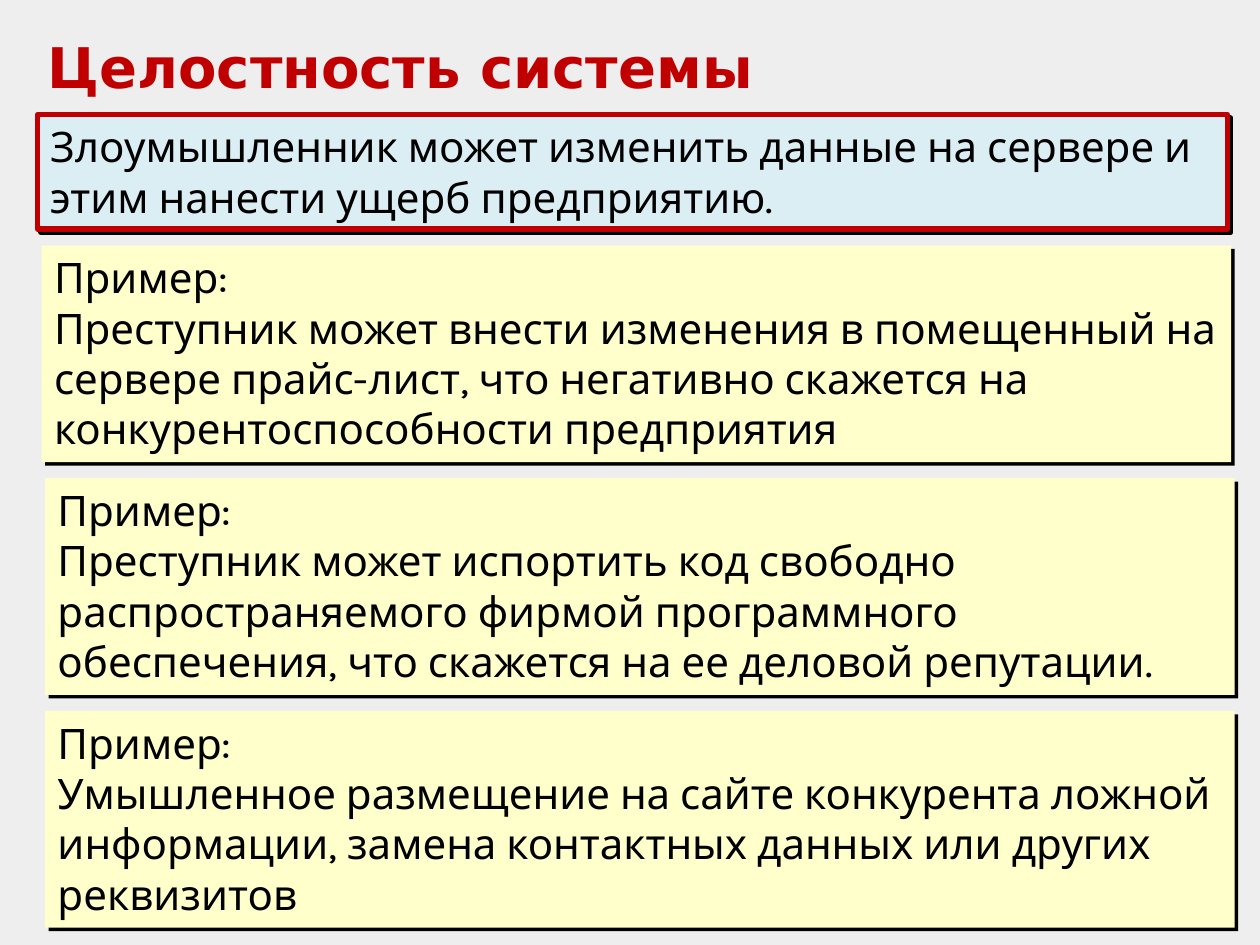
from lxml.etree import SubElement
from pptx import Presentation
from pptx.dml.color import RGBColor as RGB
from pptx.enum.shapes import MSO_SHAPE as SHAPE
from pptx.enum.text import MSO_ANCHOR as ANCHOR, MSO_AUTO_SIZE as AUTO, PP_ALIGN as ALIGN
from pptx.oxml.ns import qn
from pptx.util import Cm, Pt

COLORS = {"back": "EEEEEE", "accent": "C00000", "thesis": "DBEEF4",
          "example": "FFFFCC", "text": "000000", "shadow": "000000"}
TITLE = "Целостность системы"
THESIS = "Злоумышленник может изменить данные на сервере и этим нанести ущерб предприятию."
EXAMPLE_LABEL = "Пример:"
EXAMPLES = [  # left edge in cm, text
    (0.84, "Преступник может внести изменения в помещенный на сервере прайс-лист, "
           "что негативно скажется на конкурентоспособности предприятия"),
    (0.91, "Преступник может испортить код свободно распространяемого фирмой "
           "программного обеспечения, что скажется на ее деловой репутации."),
    (0.91, "Умышленное размещение на сайте конкурента ложной информации, "
           "замена контактных данных или других реквизитов"),
]
TITLE_FONT = {"name": "DejaVu Sans", "size": Pt(32), "bold": True}
BODY_FONT = {"name": "Karla", "size": Pt(24)}
BOX_W, THESIS_H, EXAMPLE_H = 23.98, 2.31, 4.37
EXAMPLE_TOP, EXAMPLE_STEP = 4.95, 4.69


def color(name):
    return RGB.from_string(COLORS[name])


def write(s, lines, font, ink, anchor):
    tf = s.text_frame
    tf.word_wrap = True
    tf.auto_size = AUTO.SHAPE_TO_FIT_TEXT
    tf.vertical_anchor = anchor
    for i, line in enumerate(lines):
        p = tf.paragraphs[0] if i == 0 else tf.add_paragraph()
        p.alignment = ALIGN.LEFT
        r = p.add_run()
        r.text = line
        for key, value in font.items():
            setattr(r.font, key, value)
        r.font.color.rgb = color(ink)


def add_hard_shadow(s):
    """Give the shape an unblurred shadow down and to the right."""
    s.shadow.inherit = False
    effects = s._element.spPr.find(qn("a:effectLst"))
    outer = SubElement(effects, qn("a:outerShdw"), dist=str(Pt(2.8)),
                       dir=str(45 * 60000), algn="ctr", rotWithShape="0")
    SubElement(outer, qn("a:srgbClr"), val=COLORS["shadow"])


def add_box(slide, left, top, height, fill, lines, border=None):
    s = slide.shapes.add_shape(SHAPE.RECTANGLE, Cm(left), Cm(top), Cm(BOX_W), Cm(height))
    s.fill.solid()
    s.fill.fore_color.rgb = color(fill)
    if border:
        s.line.color.rgb = color(border)
        s.line.width = Pt(3)
    else:
        s.line.fill.background()
    add_hard_shadow(s)
    write(s, lines, BODY_FONT, "text", ANCHOR.TOP)


def main():
    prs = Presentation()
    prs.slide_width, prs.slide_height = Cm(25.4), Cm(19.05)
    slide = prs.slides.add_slide(prs.slide_layouts[6])
    slide.background.fill.solid()
    slide.background.fill.fore_color.rgb = color("back")

    title = slide.shapes.add_textbox(Cm(0.71), Cm(0.53), Cm(23.8), Cm(1.63))
    write(title, [TITLE], TITLE_FONT, "accent", ANCHOR.TOP)

    add_box(slide, 0.76, 2.31, THESIS_H, "thesis", [THESIS], "accent")
    for i, (left, text) in enumerate(EXAMPLES):
        add_box(slide, left, EXAMPLE_TOP + i * EXAMPLE_STEP, EXAMPLE_H,
                "example", [EXAMPLE_LABEL, text])
    prs.save("out.pptx")


if __name__ == "__main__":
    main()
